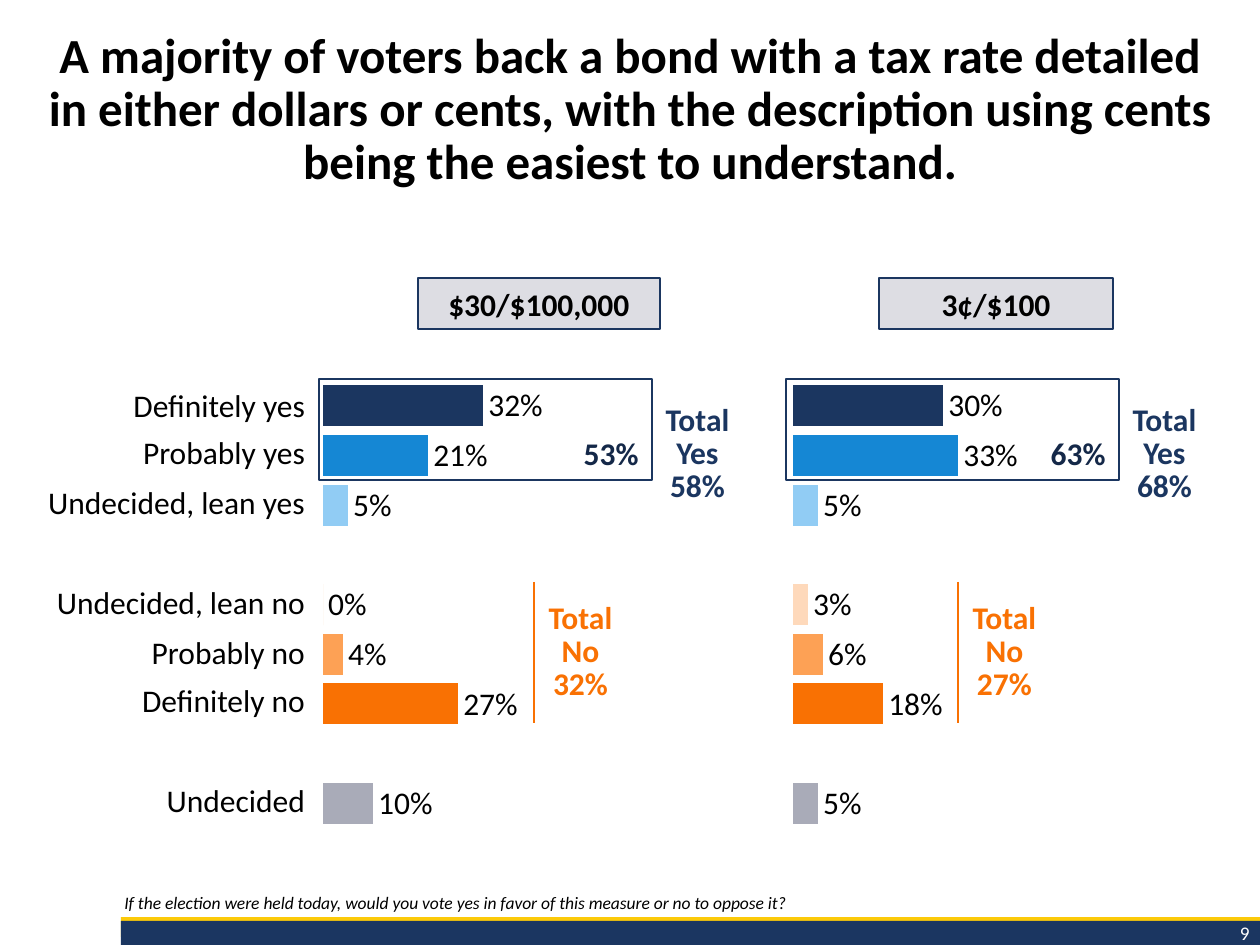
from dataclasses import dataclass
from typing import Optional

from lxml.etree import SubElement
from pptx import Presentation
from pptx.chart.data import CategoryChartData
from pptx.dml.color import RGBColor
from pptx.enum.chart import XL_CHART_TYPE as ChartType
from pptx.enum.chart import XL_LABEL_POSITION as LabelPosition
from pptx.enum.chart import XL_TICK_LABEL_POSITION as TickLabels
from pptx.enum.chart import XL_TICK_MARK as TickMark
from pptx.enum.shapes import MSO_CONNECTOR as Connector
from pptx.enum.shapes import MSO_SHAPE as Preset
from pptx.enum.text import MSO_ANCHOR as Anchor
from pptx.enum.text import PP_ALIGN as Align
from pptx.oxml.ns import qn
from pptx.util import Emu, Pt

EMU_PER_PX = 914400 / 126


@dataclass(frozen=True)
class Theme:
    font: str = "Calibri"
    title_size: int = 28
    text_size: int = 18
    note_size: int = 10
    number_size: int = 11
    black: str = "000000"
    white: str = "FFFFFF"
    navy: str = "1B3660"
    footer_navy: str = "1B3661"
    deep_navy: str = "142848"
    gold: str = "FCCA09"
    header_gray: str = "DDDDE3"
    blue: str = "1587D4"
    light_blue: str = "91CCF4"
    peach: str = "FED9BB"
    light_orange: str = "FDA155"
    orange: str = "F97103"
    gray: str = "A9ABB8"


THEME = Theme()


@dataclass(frozen=True)
class Box:
    left: int
    top: int
    width: int
    height: int

    def emu(self) -> tuple:
        return px(self.left), px(self.top), px(self.width), px(self.height)


@dataclass(frozen=True)
class TextStyle:
    size: int = THEME.text_size
    color: str = THEME.black
    bold: bool = False
    italic: bool = False
    align: Align = Align.LEFT
    line_spacing: object = None


@dataclass(frozen=True)
class Panel:
    header: str
    header_left: int
    header_width: int
    chart_left: int
    frame_left: int
    no_left: int
    subtotal: str
    total_yes: str
    total_no: str
    values: tuple


PANELS = (
    Panel("$30/$100,000", 418, 242, 304, 319, 534, "53%", "58%", "32%",
          (0.32, 0.21, 0.05, None, 0, 0.04, 0.27, None, 0.1)),
    Panel("3¢/$100", 879, 234, 774, 786, 958, "63%", "68%", "27%",
          (0.3, 0.33, 0.05, None, 0.03, 0.06, 0.18, None, 0.05)),
)
ANSWERS = (
    ("Definitely yes", 40), ("Probably yes", 47), ("Undecided, lean yes", 50),
    ("", 40), ("Undecided, lean no", 60), ("Probably no", 50),
    ("Definitely no", 48), ("", 40), ("Undecided", 60),
)
POINT_COLORS = {1: THEME.blue, 2: THEME.light_blue, 4: THEME.peach,
                5: THEME.light_orange, 6: THEME.orange, 8: THEME.gray}
PLOT_LAYOUT = {"layoutTarget": "inner", "xMode": "edge", "yMode": "edge",
               "x": "0.046", "y": "0.045", "w": "0.903", "h": "0.879"}


def px(length: int) -> Emu:
    return Emu(round(length * EMU_PER_PX))


def rgb(color: str) -> RGBColor:
    return RGBColor.from_string(color)


def style_font(font, size: int, color: str) -> None:
    font.name = THEME.font
    font.size = Pt(size)
    font.color.rgb = rgb(color)


def write(text_frame, text: str, style: TextStyle) -> None:
    text_frame.word_wrap = True
    paragraph = text_frame.paragraphs[0]
    paragraph.text = text
    paragraph.alignment = style.align
    paragraph.line_spacing = style.line_spacing
    for run in paragraph.runs:
        style_font(run.font, style.size, style.color)
        run.font.bold = style.bold
        run.font.italic = style.italic


def add_text(slide, box: Box, text: str, style: TextStyle, anchor: Anchor = Anchor.TOP) -> None:
    text_frame = slide.shapes.add_textbox(*box.emu()).text_frame
    text_frame.vertical_anchor = anchor
    write(text_frame, text, style)


def add_rectangle(slide, box: Box, fill: Optional[str] = None,
                  line: Optional[str] = None, line_width: float = 0.75):
    shape = slide.shapes.add_shape(Preset.RECTANGLE, *box.emu())
    shape.shadow.inherit = False
    if fill:
        shape.fill.solid()
        shape.fill.fore_color.rgb = rgb(fill)
    else:
        shape.fill.background()
    if line:
        shape.line.color.rgb = rgb(line)
        shape.line.width = Pt(line_width)
    else:
        shape.line.fill.background()
    return shape


def add_vertical_line(slide, left: int, top: int, bottom: int, color: str) -> None:
    connector = slide.shapes.add_connector(
        Connector.STRAIGHT, px(left), px(top), px(left), px(bottom))
    connector.line.color.rgb = rgb(color)
    connector.line.width = Pt(1.5)
    SubElement(connector.element.spPr, qn("a:effectLst"))


def set_plot_layout(chart) -> None:
    plot_area = chart.element.find(".//" + qn("c:plotArea"))
    layout = plot_area.find(qn("c:layout"))
    if layout is None:
        layout = SubElement(plot_area, qn("c:layout"))
        plot_area.insert(0, layout)
    manual = SubElement(layout, qn("c:manualLayout"))
    for name, value in PLOT_LAYOUT.items():
        SubElement(manual, qn(f"c:{name}")).set("val", value)


def add_bar_chart(slide, box: Box, values: tuple) -> None:
    data = CategoryChartData(number_format="0%")
    data.categories = [str(number) for number in range(1, len(values) + 1)]
    data.add_series("Series 1", values)
    chart = slide.shapes.add_chart(ChartType.BAR_CLUSTERED, *box.emu(), data).chart
    chart.has_legend = False
    chart.has_title = False
    style_font(chart.font, THEME.note_size, THEME.black)
    set_plot_layout(chart)

    category_axis = chart.category_axis
    category_axis.reverse_order = True
    category_axis.tick_label_position = TickLabels.NONE
    category_axis.major_tick_mark = TickMark.NONE
    category_axis.minor_tick_mark = TickMark.NONE
    category_axis.format.line.fill.background()

    value_axis = chart.value_axis
    value_axis.minimum_scale = 0
    value_axis.maximum_scale = 0.75
    value_axis.major_unit = 0.15
    value_axis.has_major_gridlines = False
    value_axis.visible = False

    plot = chart.plots[0]
    plot.gap_width = 21
    plot.vary_by_categories = False
    plot.has_data_labels = True
    labels = plot.data_labels
    labels.show_value = True
    labels.number_format = "0%"
    labels.number_format_is_linked = False
    labels.position = LabelPosition.OUTSIDE_END
    style_font(labels.font, THEME.text_size, THEME.black)

    series = plot.series[0]
    series.invert_if_negative = False
    series.format.fill.solid()
    series.format.fill.fore_color.rgb = rgb(THEME.navy)
    for index, color in POINT_COLORS.items():
        fill = series.points[index].format.fill
        fill.solid()
        fill.fore_color.rgb = rgb(color)


def add_answer_table(slide, left: int, top: int, width: int) -> None:
    box = Box(left, top, width, sum(height for _, height in ANSWERS))
    table = slide.shapes.add_table(len(ANSWERS), 1, *box.emu()).table
    table.first_row = False
    table.horz_banding = False
    for index, (answer, height) in enumerate(ANSWERS):
        table.rows[index].height = px(height)
        cell = table.cell(index, 0)
        cell.fill.background()
        cell.margin_left = cell.margin_right = cell.margin_top = px(1)
        cell.margin_bottom = 0
        cell.vertical_anchor = Anchor.BOTTOM
        write(cell.text_frame, answer, TextStyle(align=Align.RIGHT))


def add_total(slide, left: int, top: int, text: str, color: str) -> None:
    style = TextStyle(color=color, bold=True, align=Align.CENTER, line_spacing=Pt(19))
    add_text(slide, Box(left, top, 89, 113), text, style)


def add_panel(slide, panel: Panel) -> None:
    header = add_rectangle(slide, Box(panel.header_left, 278, panel.header_width, 51),
                           THEME.header_gray, THEME.navy)
    write(header.text_frame, panel.header, TextStyle(bold=True, align=Align.CENTER))
    add_bar_chart(slide, Box(panel.chart_left, 358, 416, 509), panel.values)
    add_rectangle(slide, Box(panel.frame_left, 379, 333, 101), line=THEME.navy, line_width=1.5)
    add_text(slide, Box(panel.frame_left + 237, 428, 95, 50), panel.subtotal,
             TextStyle(color=THEME.deep_navy, bold=True, align=Align.RIGHT))
    add_total(slide, panel.frame_left + 334, 398, f"Total Yes\v{panel.total_yes}", THEME.navy)
    add_total(slide, panel.no_left + 2, 596, f"Total No\v{panel.total_no}", THEME.orange)
    add_vertical_line(slide, panel.no_left, 582, 723, THEME.orange)


def main() -> None:
    presentation = Presentation()
    presentation.slide_width, presentation.slide_height = px(1260), px(945)
    slide = presentation.slides.add_slide(presentation.slide_layouts[6])
    add_rectangle(slide, Box(121, 917, 1139, 20), THEME.gold)
    add_rectangle(slide, Box(121, 921, 1139, 24), THEME.footer_navy)
    add_text(slide, Box(1076, 915, 186, 36), "9",
             TextStyle(THEME.number_size, THEME.white, align=Align.RIGHT))
    add_text(slide, Box(0, 25, 1260, 154),
             "A majority of voters back a bond with a tax rate detailed\v"
             "in either dollars or cents, with the description using cents\v"
             "being the easiest to understand.",
             TextStyle(THEME.title_size, bold=True, align=Align.CENTER, line_spacing=0.9))
    add_text(slide, Box(112, 852, 1145, 68),
             "If the election were held today, would you vote yes in favor of "
             "this measure or no to oppose it?",
             TextStyle(THEME.note_size, italic=True, line_spacing=0.9), Anchor.BOTTOM)
    add_answer_table(slide, 0, 386, 306)
    for panel in PANELS:
        add_panel(slide, panel)
    presentation.save("out.pptx")


if __name__ == "__main__":
    main()
